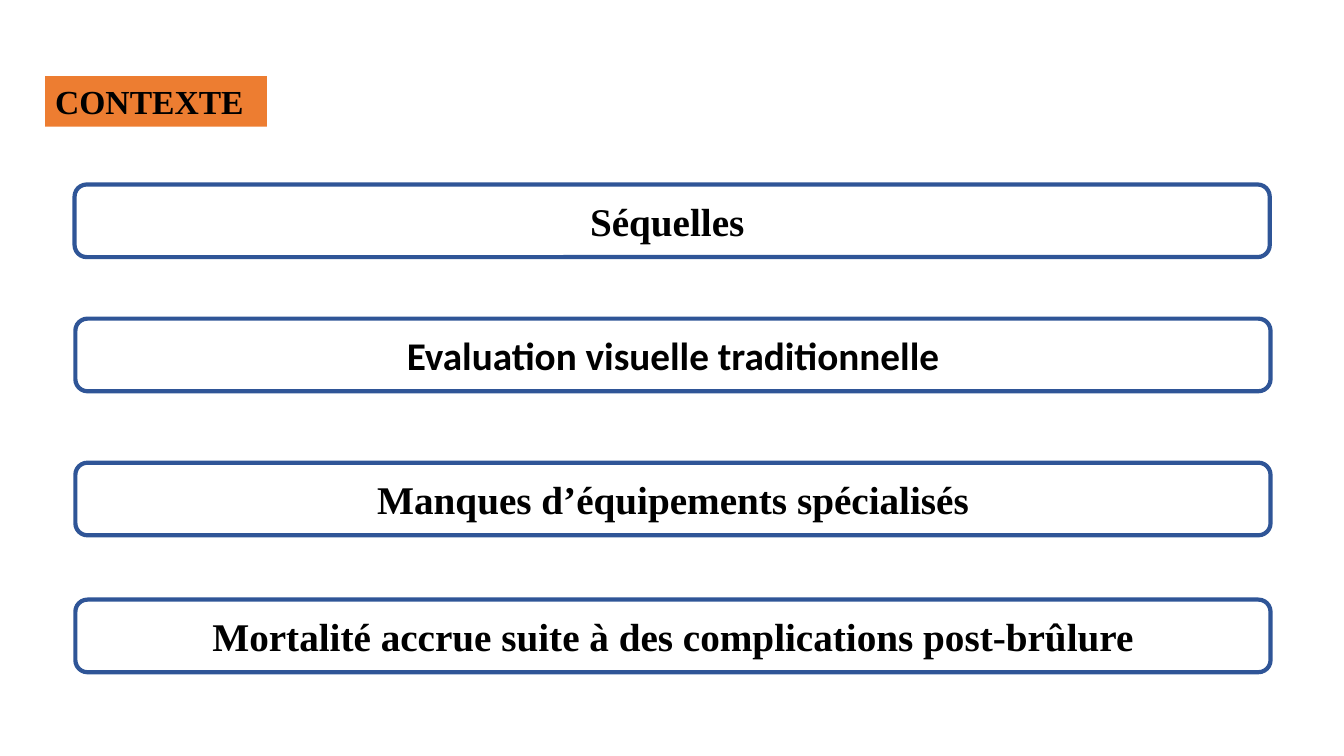
from pptx import Presentation
from pptx.dml.color import RGBColor
from pptx.enum.shapes import MSO_SHAPE
from pptx.enum.text import MSO_ANCHOR, PP_ALIGN
from pptx.util import Cm, Pt

ORANGE = RGBColor(0xED, 0x7D, 0x31)
BLUE = RGBColor(0x2F, 0x55, 0x97)
WHITE = RGBColor(0xFF, 0xFF, 0xFF)
BLACK = RGBColor(0x00, 0x00, 0x00)

SERIF = "Times New Roman"
SANS = "Calibri"


class ContextPage:
    """Holds the style and the current slide."""

    def __init__(self, deck):
        self.page = deck.slides.add_slide(deck.slide_layouts[6])

    def box(self, kind, left, top, width, height, fill):
        box = self.page.shapes.add_shape(
            kind, Cm(left), Cm(top), Cm(width), Cm(height))
        box.shadow.inherit = False
        box.fill.solid()
        box.fill.fore_color.rgb = fill
        return box

    def label(self, box, text, size, font, align, anchor):
        frame = box.text_frame
        frame.word_wrap = True
        frame.vertical_anchor = anchor
        frame.text = text
        para = frame.paragraphs[0]
        para.alignment = align
        for span in para.runs:
            span.font.name = font
            span.font.size = Pt(size)
            span.font.bold = True
            span.font.color.rgb = BLACK

    def heading(self, text):
        box = self.box(MSO_SHAPE.RECTANGLE, 1.14, 1.92, 5.59, 1.27, ORANGE)
        box.line.fill.background()
        self.label(box, text, 24, SERIF, PP_ALIGN.LEFT, MSO_ANCHOR.TOP)

    def bar(self, text, left, top, font):
        box = self.box(MSO_SHAPE.ROUNDED_RECTANGLE, left, top, 30.12, 1.83, WHITE)
        box.line.color.rgb = BLUE
        box.line.width = Pt(3)
        self.label(box, text, 28, font, PP_ALIGN.CENTER, MSO_ANCHOR.MIDDLE)


def main():
    deck = Presentation()
    deck.slide_width, deck.slide_height = Cm(33.87), Cm(19.05)
    context = ContextPage(deck)

    # Heading
    context.heading("CONTEXTE")

    # Context points, from top to bottom
    points = [
        ("Séquelles ", 1.88, 4.65, SERIF),
        ("Evaluation visuelle traditionnelle", 1.9, 8.03, SANS),
        ("Manques d’équipements spécialisés", 1.9, 11.66, SERIF),
        ("Mortalité accrue suite à des complications post-brûlure", 1.9, 15.11, SERIF),
    ]
    for text, left, top, font in points:
        context.bar(text, left, top, font)

    deck.save("out.pptx")


if __name__ == "__main__":
    main()
